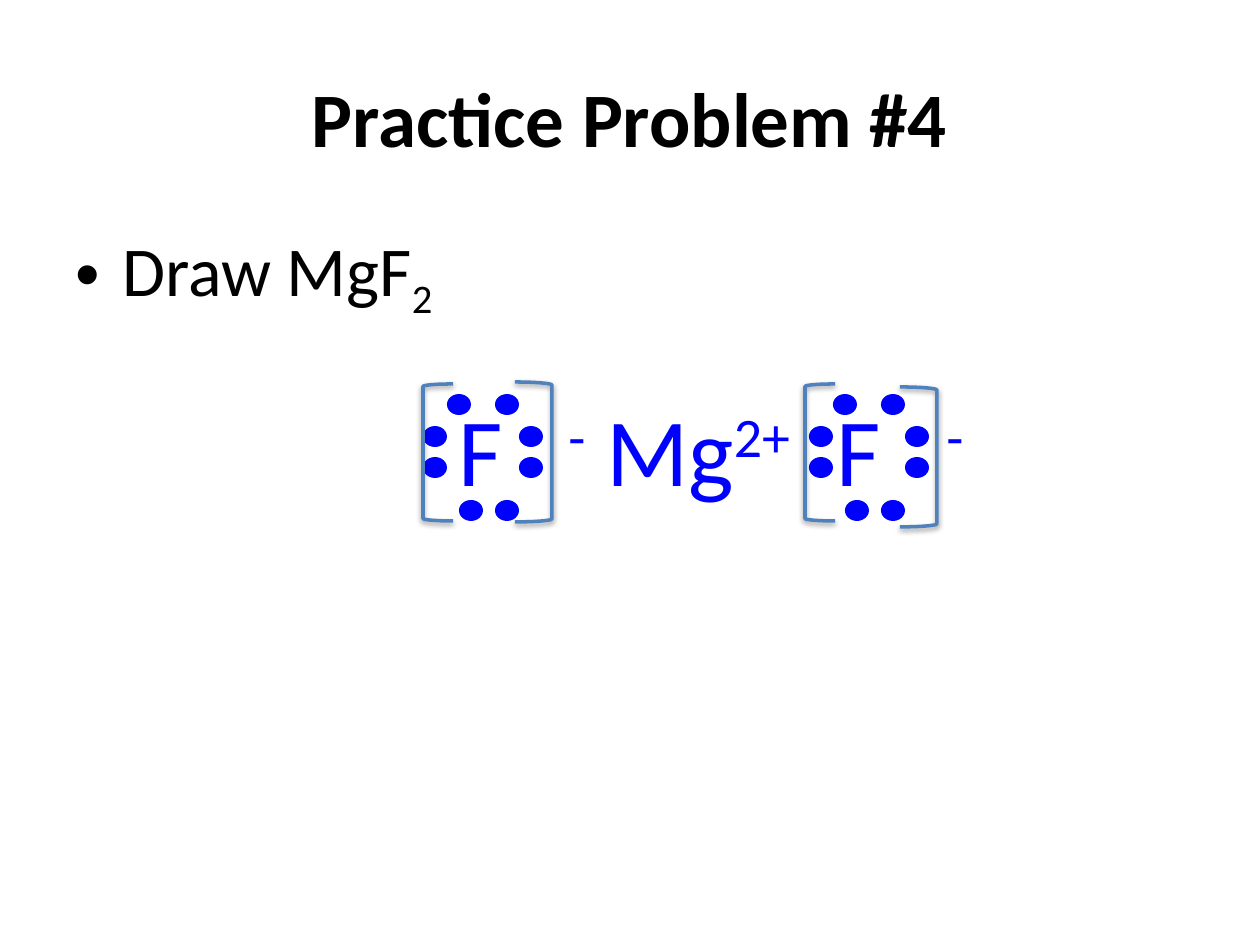
from lxml import etree
from pptx import Presentation
from pptx.dml.color import RGBColor
from pptx.enum.shapes import MSO_SHAPE
from pptx.enum.text import MSO_ANCHOR, MSO_AUTO_SIZE, PP_ALIGN
from pptx.oxml import parse_xml
from pptx.oxml.ns import nsdecls, qn
from pptx.util import Pt

SCALE = 914400 / 126
BLACK = RGBColor(0, 0, 0)
ION_BLUE = RGBColor(0, 0, 255)
BRACKET_BLUE = RGBColor(0x4F, 0x81, 0xBD)
OVAL = MSO_SHAPE.OVAL
LEFT_BRACKET = MSO_SHAPE.LEFT_BRACKET
RIGHT_BRACKET = MSO_SHAPE.RIGHT_BRACKET
MIDDLE = MSO_ANCHOR.MIDDLE
TOP = MSO_ANCHOR.TOP
CENTER = PP_ALIGN.CENTER
GROW = MSO_AUTO_SIZE.SHAPE_TO_FIT_TEXT

SUBSCRIPT, SUPERSCRIPT = -25000, 30000
ELECTRON_SIZE = (24, 21)
ELECTRON_OFFSETS = [
    (36, 106), (72, 106),
    (24, 0), (72, 0),
    (0, 32), (0, 63),
    (96, 32), (96, 63),
]
OCTET_ORIGINS = [(423, 394), (809, 394)]
BRACKETS = [
    (LEFT_BRACKET, (423, 384, 30, 137)),
    (RIGHT_BRACKET, (515, 382, 37, 140)),
    (LEFT_BRACKET, (805, 384, 30, 137)),
    (RIGHT_BRACKET, (900, 387, 37, 140)),
]
FORMULA_STOPS = (110, 148, 378, 488)


def px(value):
    return round(value * SCALE)


def box(*lengths):
    return [px(length) for length in lengths]


def add_text(slide, bounds, runs, size, color=BLACK, bold=False, anchor=TOP):
    frame = slide.shapes.add_textbox(*box(*bounds)).text_frame
    frame.word_wrap = True
    frame.vertical_anchor = anchor
    paragraph = frame.paragraphs[0]
    for text, baseline in runs:
        run = paragraph.add_run()
        run.text = text
        run.font.name = "Calibri"
        run.font.size = Pt(size)
        run.font.bold = bold
        run.font.color.rgb = color
        if baseline:
            run.font._element.set("baseline", str(baseline))
    return frame


def add_bullet(paragraph, indent):
    properties = paragraph._p.get_or_add_pPr()
    properties.set("marL", str(px(indent)))
    properties.set("indent", str(px(-indent)))
    before = etree.SubElement(properties, qn("a:spcBef"))
    etree.SubElement(before, qn("a:spcPct"), val="20000")
    etree.SubElement(properties, qn("a:buFont"), typeface="Arial")
    etree.SubElement(properties, qn("a:buChar"), char="•")


def add_tab_stops(paragraph, stops):
    tabs = etree.SubElement(paragraph._p.get_or_add_pPr(), qn("a:tabLst"))
    for stop in stops:
        etree.SubElement(tabs, qn("a:tab"), pos=str(px(stop)), algn="l")


def add_octet(slide, left, top):
    octet = slide.shapes.add_group_shape()
    for across, down in ELECTRON_OFFSETS:
        bounds = box(left + across, top + down, *ELECTRON_SIZE)
        electron = octet.shapes.add_shape(OVAL, *bounds)
        electron.shadow.inherit = False
        electron.fill.solid()
        electron.fill.fore_color.rgb = ION_BLUE
        electron.line.fill.background()


def add_bracket(slide, kind, bounds):
    bracket = slide.shapes.add_shape(kind, *box(*bounds))
    bracket.fill.background()
    bracket.line.color.rgb = BRACKET_BLUE
    bracket.line.width = Pt(2)
    bracket._element.spPr.append(parse_xml(
        f'<a:effectLst {nsdecls("a")}>'
        '<a:outerShdw blurRad="40000" dist="20000" dir="5400000" rotWithShape="0">'
        '<a:srgbClr val="000000"><a:alpha val="38000"/></a:srgbClr>'
        '</a:outerShdw></a:effectLst>'
    ))


def main():
    presentation = Presentation()
    presentation.slide_width, presentation.slide_height = box(1260, 945)
    slide = presentation.slides.add_slide(presentation.slide_layouts[6])

    title = add_text(slide, (63, 38, 1134, 158), [("Practice Problem #4", 0)],
                     44, bold=True, anchor=MIDDLE)
    title.paragraphs[0].alignment = CENTER

    task = add_text(slide, (63, 220, 1134, 624),
                    [("Draw MgF", 0), ("2", SUBSCRIPT)], 40)
    add_bullet(task.paragraphs[0], 47)

    formula_runs = [
        ("F\t", 0), ("-", SUPERSCRIPT),
        ("\tMg", 0), ("2+", SUPERSCRIPT),
        ("\tF\t", 0), ("-", SUPERSCRIPT),
    ]
    formula = add_text(slide, (446, 384, 638, 130), formula_runs, 55, ION_BLUE)
    formula.auto_size = GROW
    add_tab_stops(formula.paragraphs[0], FORMULA_STOPS)

    for left, top in OCTET_ORIGINS:
        add_octet(slide, left, top)
    for kind, bounds in BRACKETS:
        add_bracket(slide, kind, bounds)

    presentation.save("out.pptx")


if __name__ == "__main__":
    main()
